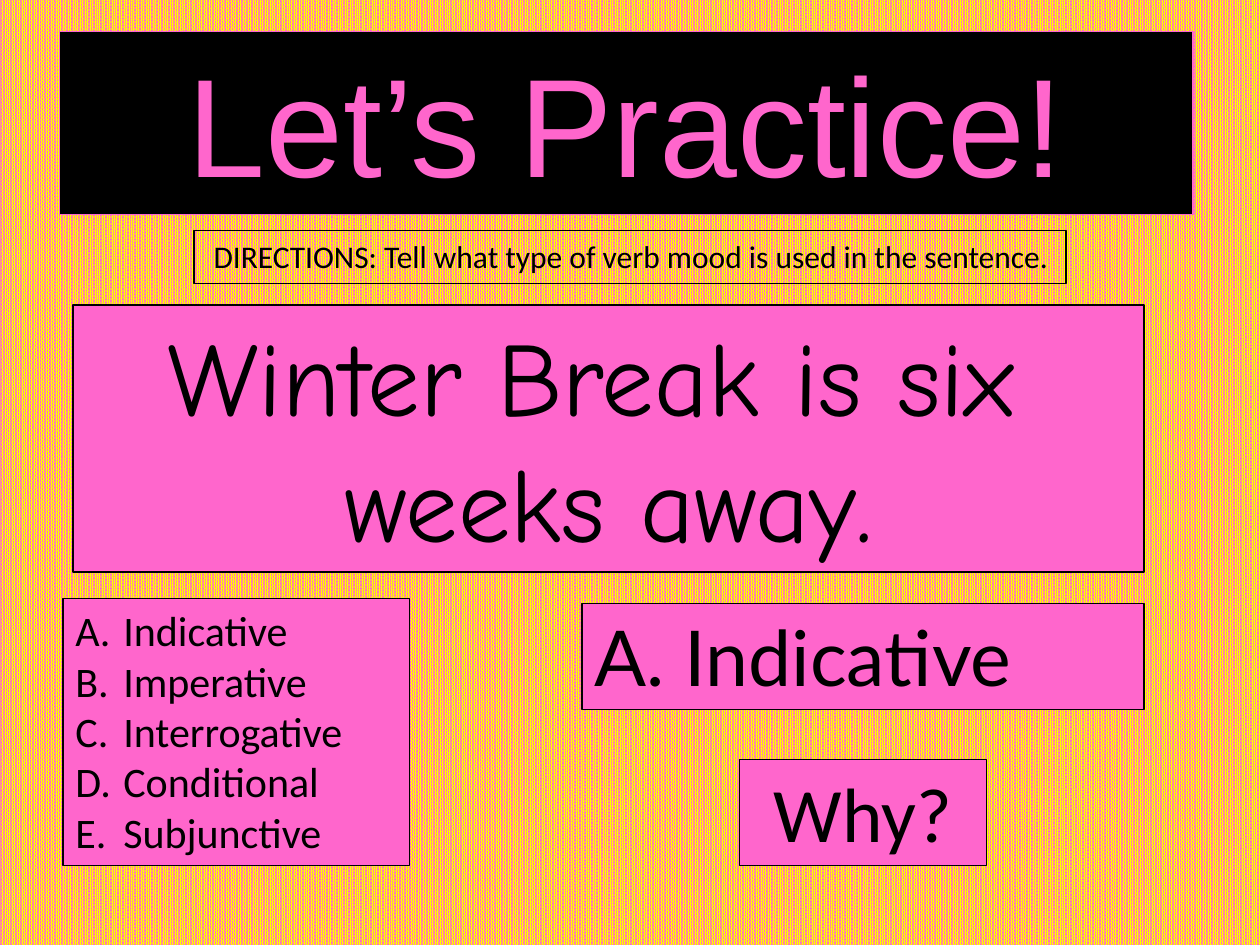
from lxml.etree import SubElement
from pptx import Presentation
from pptx.dml.color import RGBColor
from pptx.enum.dml import MSO_PATTERN
from pptx.enum.text import MSO_AUTO_SIZE, PP_ALIGN
from pptx.oxml.ns import qn
from pptx.util import Inches, Pt

COLOURS = {"pink": "FF66CC", "yellow": "FFFF00", "black": "000000"}
MOODS = ["Indicative", "Imperative", "Interrogative", "Conditional", "Subjunctive"]


def colour(name):
    return RGBColor.from_string(COLOURS[name])


def letter_paragraph(para, indent=0.38):
    """Number a paragraph A., B., C. with a hanging indent."""
    properties = para._p.get_or_add_pPr()
    properties.set("marL", str(Inches(indent)))
    properties.set("indent", str(Inches(-indent)))
    SubElement(properties, qn("a:buFont"), typeface="+mj-lt")
    SubElement(properties, qn("a:buAutoNum"), type="alphaUcPeriod")


def add_panel(page, box, lines, size, font="Calibri", ink="black", fill="pink",
              line="black", align=PP_ALIGN.LEFT, lettered=False):
    """Place a bordered text panel at box: left, top, width, height in inches."""
    panel = page.shapes.add_textbox(*(Inches(length) for length in box))
    if fill:
        panel.fill.solid()
        panel.fill.fore_color.rgb = colour(fill)
    panel.line.color.rgb = colour(line)
    panel.line.width = Pt(0.75)
    frame = panel.text_frame
    frame.word_wrap = True
    frame.auto_size = MSO_AUTO_SIZE.SHAPE_TO_FIT_TEXT
    for index, text in enumerate(lines):
        para = frame.add_paragraph() if index else frame.paragraphs[0]
        para.alignment = align
        if lettered:
            letter_paragraph(para)
        span = para.add_run()
        span.text = text
        span.font.size = Pt(size)
        span.font.name = font
        span.font.color.rgb = colour(ink)


def paint_background(page):
    fill = page.background.fill
    fill.patterned()
    fill.pattern = MSO_PATTERN.PERCENT_90
    fill.fore_color.rgb = colour("yellow")
    fill.back_color.rgb = colour("pink")


def add_practice_page(deck):
    page = deck.slides.add_slide(deck.slide_layouts[6])
    paint_background(page)
    # Title and directions
    add_panel(page, (0.47, 0.25, 9, 1.45), ["Let’s Practice!"], 80, font="Arial",
              ink="pink", fill="black", line="pink", align=PP_ALIGN.CENTER)
    add_panel(page, (1.54, 1.83, 6.92, 0.42),
              [" DIRECTIONS: Tell what type of verb mood is used in the sentence."],
              18, fill=None)
    # Sentence to classify
    add_panel(page, (0.58, 2.42, 8.5, 2.12), ["Winter Break is six ", "weeks away."],
              60, font="Comic Neue", align=PP_ALIGN.CENTER)
    # Choices, answer and follow-up question
    add_panel(page, (0.5, 4.75, 2.75, 2.12), MOODS, 24, lettered=True)
    add_panel(page, (4.62, 4.79, 4.46, 0.84), ["A. Indicative"], 44, font="Lato")
    add_panel(page, (5.87, 6.03, 1.96, 0.84), ["Why?"], 44, align=PP_ALIGN.CENTER)


def main():
    deck = Presentation()
    deck.slide_width = Inches(10)
    deck.slide_height = Inches(7.5)
    add_practice_page(deck)
    deck.save("out.pptx")


if __name__ == "__main__":
    main()
